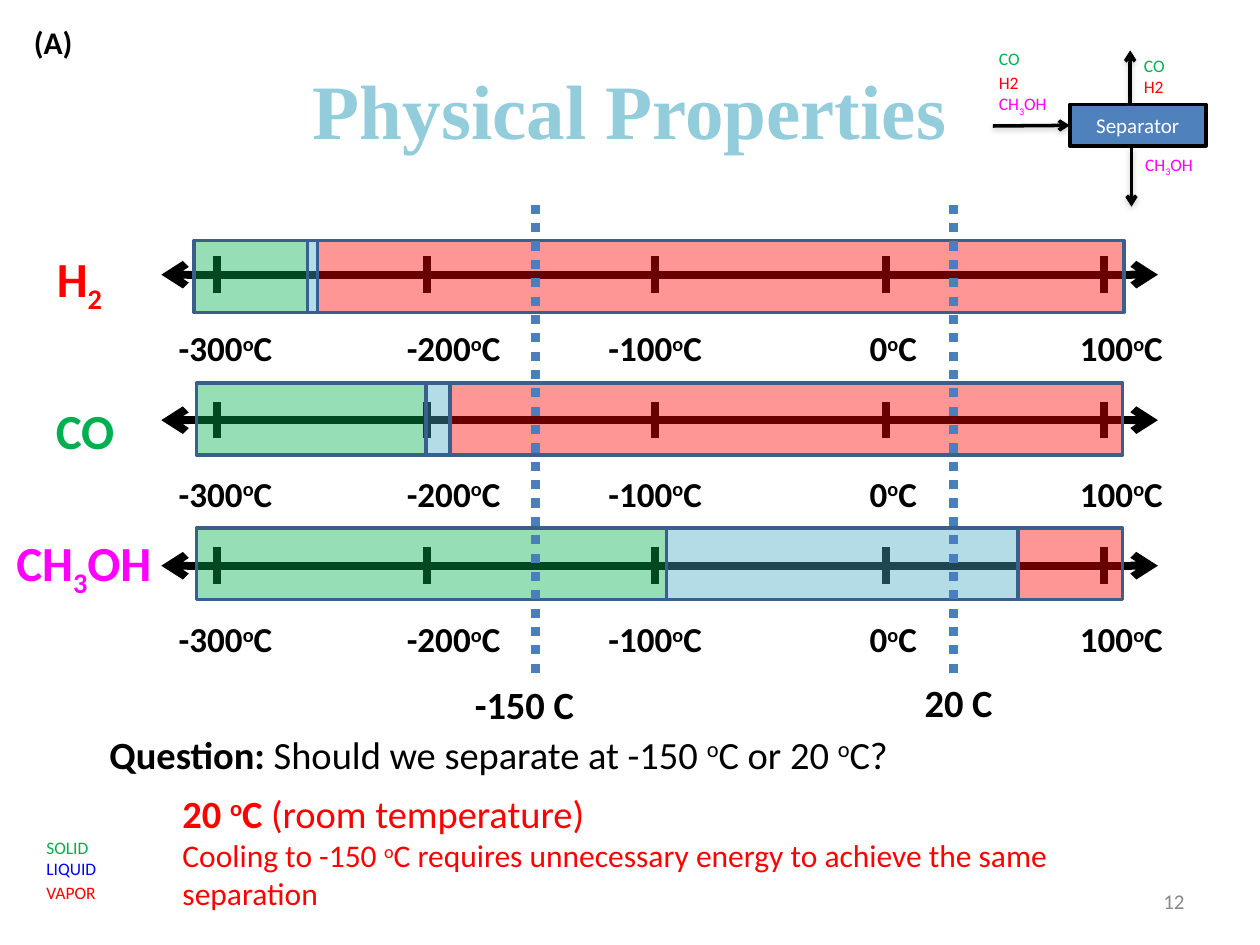
import pptx
import pptx.util
import pptx.dml.color
import pptx.enum.dml
import pptx.enum.shapes
import pptx.enum.text
import pptx.oxml
import pptx.oxml.ns

RGBColor = pptx.dml.color.RGBColor
PP_ALIGN = pptx.enum.text.PP_ALIGN
ANCHOR = pptx.enum.text.MSO_ANCHOR
Pt = pptx.util.Pt
qn = pptx.oxml.ns.qn

BLACK = RGBColor(0x00, 0x00, 0x00)
WHITE = RGBColor(0xFF, 0xFF, 0xFF)
GREY = RGBColor(0x89, 0x89, 0x89)
RED = RGBColor(0xFF, 0x00, 0x00)
GREEN = RGBColor(0x00, 0xB0, 0x50)
BLUE = RGBColor(0x00, 0x00, 0xFF)
MAGENTA = RGBColor(0xFF, 0x00, 0xFF)
TEAL = RGBColor(0x4B, 0xAC, 0xC6)
TITLE_BLUE = RGBColor(0x93, 0xCD, 0xDC)
BOX_BLUE = RGBColor(0x4F, 0x81, 0xBD)
BAR_EDGE = RGBColor(0x3A, 0x5F, 0x8C)
DOT_BLUE = RGBColor(0x4B, 0x7E, 0xBC)

WIDTH, HEIGHT = pptx.util.Inches(10), pptx.util.Inches(7.5)
COLUMNS, ROWS = 100, 75
ROW_PITCH = 11.55

TICKS = [17.2, 33.9, 52, 70.3, 87.6]
SCALE = [("-300", 17.9), ("-200", 36), ("-100", 52), ("0", 70.9), ("100", 89)]
PHASE_COLOURS = [GREEN, TEAL, RED]
# top of each bar, then the bounds of solid, liquid and vapor
PHASE_BARS = [
    (19.1, [15.4, 24.4, 25.2, 89.2]),
    (30.4, [15.6, 33.8, 35.7, 89.1]),
    (41.9, [15.6, 52.9, 80.8, 89.1]),
]
ARROW_SHADOW = (
    '<a:outerShdw blurRad="40000" dist="20000" dir="5400000" rotWithShape="0">'
    '<a:srgbClr val="808080"><a:alpha val="38000"/></a:srgbClr></a:outerShdw>'
)


def col(n):
    return int(WIDTH * n / COLUMNS)


def row(n):
    return int(HEIGHT * n / ROWS)


def grid_box(left, top, width, height):
    return col(left), row(top), col(width), row(height)


def write(paragraph, text, size, colour, bold=False, font="Calibri"):
    """Add runs; ^ raises and _ lowers the one character that follows."""
    pieces, baseline = [], 0
    for char in text:
        if char in "^_":
            baseline = 30000 if char == "^" else -25000
            continue
        if pieces and not baseline and not pieces[-1][1]:
            pieces[-1][0] += char
        else:
            pieces.append([char, baseline])
        baseline = 0
    for piece, shift in pieces:
        run = paragraph.add_run()
        run.text = piece
        run.font.size, run.font.bold, run.font.name = Pt(size), bold, font
        run.font.color.rgb = colour
        if shift:
            run.font._element.set("baseline", str(shift))


def add_text(slide, box, lines, size, bold=False, align=PP_ALIGN.LEFT,
             anchor=ANCHOR.TOP, wrap=True):
    """Write one paragraph for each (text, colour) pair."""
    frame = slide.shapes.add_textbox(*grid_box(*box)).text_frame
    frame.word_wrap, frame.vertical_anchor = wrap, anchor
    for i, (text, colour) in enumerate(lines):
        paragraph = frame.add_paragraph() if i else frame.paragraphs[0]
        paragraph.alignment = align
        write(paragraph, text, size, colour, bold)
    return frame


def add_label(slide, box, text, size, colour):
    add_text(slide, box, [(text, colour)], size, True, PP_ALIGN.CENTER, ANCHOR.MIDDLE)


def add_line(slide, start, end, colour, width, arrows=(), dash=None, effect=""):
    line = slide.shapes.add_connector(
        pptx.enum.shapes.MSO_CONNECTOR.STRAIGHT,
        col(start[0]), row(start[1]), col(end[0]), row(end[1]))
    line.line.color.rgb, line.line.width = colour, Pt(width)
    if dash:
        line.line.dash_style = dash
    properties = line._element.spPr
    for end_name in arrows:
        properties.find(qn("a:ln")).append(pptx.oxml.parse_xml(
            f'<a:{end_name} {pptx.oxml.ns.nsdecls("a")} type="arrow"/>'))
    properties.append(pptx.oxml.parse_xml(
        f'<a:effectLst {pptx.oxml.ns.nsdecls("a")}>{effect}</a:effectLst>'))
    return line


def add_rectangle(slide, box, fill, edge, opacity=None):
    rectangle = slide.shapes.add_shape(
        pptx.enum.shapes.MSO_SHAPE.RECTANGLE, *grid_box(*box))
    rectangle.shadow.inherit = False
    rectangle.fill.solid()
    rectangle.fill.fore_color.rgb = fill
    rectangle.line.color.rgb, rectangle.line.width = edge, Pt(2)
    if opacity:
        colour = rectangle._element.spPr.find(qn("a:solidFill")).find(qn("a:srgbClr"))
        colour.append(pptx.oxml.parse_xml(
            f'<a:alpha {pptx.oxml.ns.nsdecls("a")} val="{opacity * 1000}"/>'))
    return rectangle


def add_title(slide):
    title = slide.shapes.title
    title.left, title.top, title.width, title.height = grid_box(5, 2.4, 90, 12.5)
    title.text_frame.vertical_anchor = ANCHOR.MIDDLE
    paragraph = title.text_frame.paragraphs[0]
    paragraph.alignment = PP_ALIGN.CENTER
    write(paragraph, "Physical Properties", 44, TITLE_BLUE, True, "Times New Roman")


def add_temperature_axis(slide, y):
    add_line(slide, (12.8, y), (91.9, y), BLACK, 4.5, ("headEnd", "tailEnd"))
    for x in TICKS:
        add_line(slide, (x, y - 1.45), (x, y + 1.45), BLACK, 4.5)
    for degrees, centre in SCALE:
        add_label(slide, (centre - 6.5, y + 3.1, 13, 5.4), degrees + "^oC", 20, BLACK)


def add_phase_bars(slide):
    for top, bounds in PHASE_BARS:
        for colour, left, right in zip(PHASE_COLOURS, bounds, bounds[1:]):
            add_rectangle(slide, (left, top, right - left, 5.7), colour, BAR_EDGE, 41)


def add_separator(slide):
    separator = add_rectangle(slide, (84.9, 8.3, 10.8, 3.3), BOX_BLUE, BLACK)
    frame = separator.text_frame
    frame.vertical_anchor = ANCHOR.MIDDLE
    frame.paragraphs[0].alignment = PP_ALIGN.CENTER
    write(frame.paragraphs[0], "Separator", 12, WHITE)

    vapor, liquid, feed = [
        add_line(slide, start, end, BLACK, 2, ("tailEnd",), effect=ARROW_SHADOW)
        for start, end in [((89.7, 8.3), (89.7, 4)),
                           ((89.8, 11.7), (89.8, 16.4)),
                           ((78.8, 10), (84.9, 10))]]
    feed.end_connect(separator, 1)

    add_text(slide, (89.9, 11.7, 8.4, 2.7), [("CH_3OH", MAGENTA)], 10)
    add_text(slide, (89.8, 3.9, 5.8, 4.4), [("CO", GREEN), ("H2", RED)], 10)
    feed_names = add_text(slide, (78.3, 3.3, 7.6, 8.1), [("CO", GREEN), ("H2", RED)], 10)
    mixture = feed_names.paragraphs[1]
    mixture.space_before = Pt(2)
    mixture.add_line_break()
    write(mixture, "CH_3OH", 10, MAGENTA)


def add_question_and_answer(slide):
    question = add_text(slide, (7.7, 57.5, 81.5, 4.7), [("", BLACK)], 22).paragraphs[0]
    write(question, "Question: ", 22, BLACK, True)
    write(question, "Should we separate at -150 ^oC or 20 ^oC?", 22, BLACK)

    answer = add_text(slide, (13.5, 62.2, 76.4, 10.8), [("", RED)], 22)
    write(answer.paragraphs[0], "20 ^oC", 22, RED, True)
    write(answer.paragraphs[0], " (room temperature)", 22, RED)
    write(answer.add_paragraph(), "Cooling to -150 ^oC requires unnecessary energy "
          "to achieve the same separation", 18, RED)


def main():
    deck = pptx.Presentation()
    deck.slide_width, deck.slide_height = WIDTH, HEIGHT
    slide = deck.slides.add_slide(deck.slide_layouts[5])
    add_title(slide)

    for i in range(len(PHASE_BARS)):
        add_temperature_axis(slide, 21.8 + i * ROW_PITCH)
    add_text(slide, (3.4, 19.2, 5.8, 5.7), [("H_2", RED)], 28, True,
             PP_ALIGN.CENTER, wrap=False)
    add_label(slide, (-0.7, 31, 14.9, 6.2), "CO", 28, GREEN)
    add_phase_bars(slide)
    add_label(slide, (-0.8, 41.8, 14.9, 6.2), "CH_3OH", 28, MAGENTA)

    for x in (75.7, 42.5):
        add_line(slide, (x, 53.4), (x, 16.3), DOT_BLUE, 5.25,
                 dash=pptx.enum.dml.MSO_LINE.ROUND_DOT)
    add_text(slide, (72.4, 53.4, 11.7, 4.7), [("20 C", BLACK)], 22, True)
    add_text(slide, (36.7, 53.6, 11.7, 4.7), [("-150 C", BLACK)], 22, True)

    add_question_and_answer(slide)
    add_separator(slide)
    legend = add_text(slide, (2.7, 65.9, 11.7, 6.4),
                      [("SOLID", GREEN), ("LIQUID", BLUE), ("VAPOR", RED)], 10)
    legend.paragraphs[2].space_before = Pt(2)
    add_text(slide, (1.7, 1.3, 5.8, 4), [("(A)", BLACK)], 18, True)
    add_text(slide, (71.7, 69.5, 23.3, 4), [("12", GREY)], 12,
             align=PP_ALIGN.RIGHT, anchor=ANCHOR.MIDDLE)
    deck.save("out.pptx")


if __name__ == "__main__":
    main()
